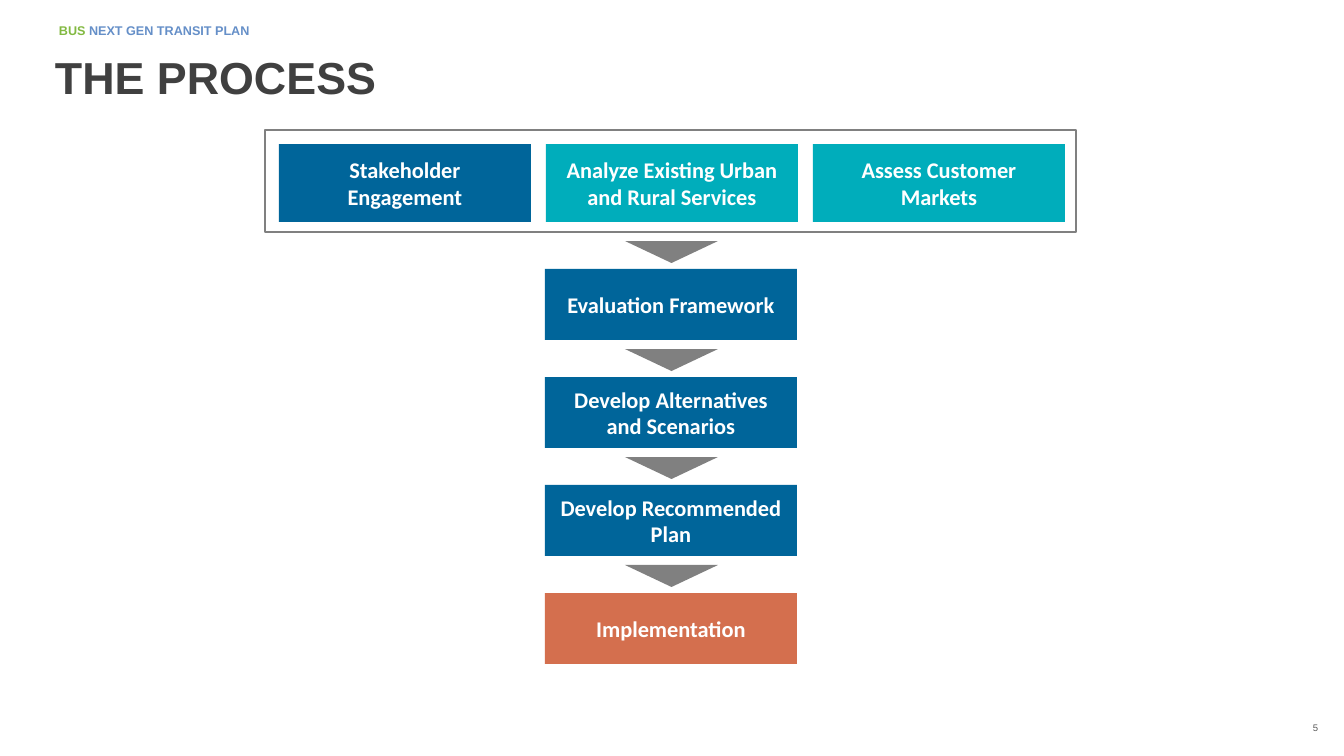
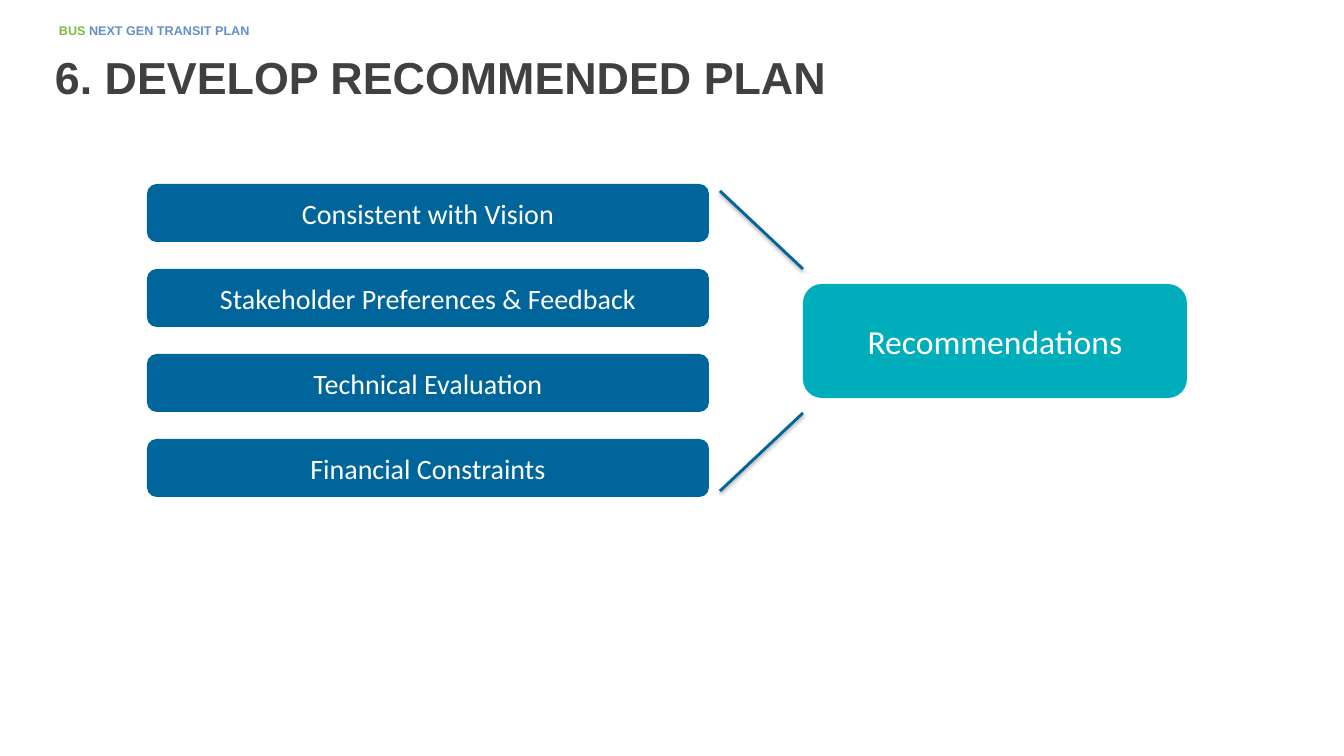
from dataclasses import dataclass

from lxml import etree
from pptx import Presentation
from pptx.dml.color import RGBColor
from pptx.enum.shapes import MSO_CONNECTOR, MSO_SHAPE
from pptx.enum.text import MSO_ANCHOR, PP_ALIGN
from pptx.oxml.ns import qn
from pptx.util import Emu, Pt

SLIDE_WIDTH, SLIDE_HEIGHT = 1344, 756
EMU_PER_PX = 12192000 / SLIDE_WIDTH


@dataclass(frozen=True)
class Theme:
    blue: str = "00659A"
    teal: str = "00ADBB"
    orange: str = "D46F4E"
    gray: str = "808080"
    white: str = "FFFFFF"
    title_color: str = "404040"
    number_color: str = "595959"
    header_green: str = "82B941"
    header_blue: str = "658FC8"
    heading_font: str = "Arial"
    body_font: str = "Calibri"
    header_size: float = 9
    title_size: float = 32
    number_size: float = 6.8
    step_size: float = 16
    factor_size: float = 20
    result_size: float = 24
    line_width: float = 2


THEME = Theme()


def px(*lengths):
    return [Emu(round(length * EMU_PER_PX)) for length in lengths]


def rgb(color):
    return RGBColor.from_string(color)


def add_run(paragraph, text, font, size, color, bold=False):
    run = paragraph.add_run()
    run.text = text
    run.font.name = font
    run.font.size = Pt(size)
    run.font.bold = bold
    run.font.color.rgb = rgb(color)


def add_text_box(slide, bounds, runs, size, bold=True, align=PP_ALIGN.LEFT,
                 anchor=MSO_ANCHOR.MIDDLE, inset=True):
    """Add one line of heading text; runs are (text, color) pairs."""
    frame = slide.shapes.add_textbox(*px(*bounds)).text_frame
    frame.word_wrap = True
    frame.vertical_anchor = anchor
    if not inset:
        frame.margin_left = frame.margin_right = 0
        frame.margin_top = frame.margin_bottom = 0
    paragraph = frame.paragraphs[0]
    paragraph.alignment = align
    for text, color in runs:
        add_run(paragraph, text, THEME.heading_font, size, color, bold)


def add_plain_shape(slide, kind, bounds, fill=None):
    shape = slide.shapes.add_shape(kind, *px(*bounds))
    shape.shadow.inherit = False
    shape.line.fill.background()
    if fill:
        shape.fill.solid()
        shape.fill.fore_color.rgb = rgb(fill)
    else:
        shape.fill.background()
    return shape


def add_label_box(slide, kind, bounds, fill, lines, size, bold=False):
    """Add a filled box with centred white text, one paragraph per line."""
    frame = add_plain_shape(slide, kind, bounds, fill).text_frame
    frame.word_wrap = True
    frame.vertical_anchor = MSO_ANCHOR.MIDDLE
    for index, line in enumerate(lines):
        paragraph = frame.add_paragraph() if index else frame.paragraphs[0]
        paragraph.alignment = PP_ALIGN.CENTER
        add_run(paragraph, line, THEME.body_font, size, THEME.white, bold)


def add_down_marker(slide, bounds):
    marker = add_plain_shape(slide, MSO_SHAPE.ISOSCELES_TRIANGLE, bounds, THEME.gray)
    marker.rotation = 180


def add_shadowed_line(slide, start, end):
    line = slide.shapes.add_connector(MSO_CONNECTOR.STRAIGHT, *px(*start, *end))
    line.line.color.rgb = rgb(THEME.blue)
    line.line.width = Pt(THEME.line_width)
    effects = etree.SubElement(line._element.spPr, qn("a:effectLst"))
    shadow = etree.SubElement(effects, qn("a:outerShdw"), blurRad=str(Pt(3.1)),
                              dist=str(Pt(1.6)), dir="5400000", rotWithShape="0")
    color = etree.SubElement(shadow, qn("a:srgbClr"), val="000000")
    etree.SubElement(color, qn("a:alpha"), val="38000")


def add_titled_slide(presentation, title):
    slide = presentation.slides.add_slide(presentation.slide_layouts[6])
    add_text_box(slide, (49, 18, 954, 25),
                 [("BUS ", THEME.header_green),
                  ("NEXT GEN TRANSIT PLAN", THEME.header_blue)],
                 THEME.header_size, anchor=MSO_ANCHOR.TOP)
    add_text_box(slide, (45, 36, 1231, 81), [(title, THEME.title_color)],
                 THEME.title_size)
    return slide


def build_process(presentation):
    slide = add_titled_slide(presentation, "THE PROCESS")
    add_text_box(slide, (1299, 717, 33, 21), [("5", THEME.number_color)],
                 THEME.number_size, bold=False, align=PP_ALIGN.CENTER, inset=False)

    inputs = [
        (["Stakeholder", "Engagement"], THEME.blue),
        (["Analyze Existing Urban and Rural Services"], THEME.teal),
        (["Assess Customer Markets"], THEME.teal),
    ]
    for column, (lines, fill) in enumerate(inputs):
        add_label_box(slide, MSO_SHAPE.RECTANGLE, (279 + 267 * column, 144, 252, 78),
                      fill, lines, THEME.step_size, bold=True)
    frame = add_plain_shape(slide, MSO_SHAPE.RECTANGLE, (265, 130, 811, 102))
    frame.line.color.rgb = rgb(THEME.gray)
    frame.line.width = Pt(THEME.line_width)

    steps = [
        ("Evaluation Framework", THEME.blue),
        ("Develop Alternatives and Scenarios", THEME.blue),
        ("Develop Recommended Plan", THEME.blue),
        ("Implementation", THEME.orange),
    ]
    for row, (text, fill) in enumerate(steps):
        top = 269 + 108 * row
        add_down_marker(slide, (625, top - 28, 93, 22))
        add_label_box(slide, MSO_SHAPE.RECTANGLE, (545, top, 252, 71),
                      fill, [text], THEME.step_size, bold=True)


def build_recommendations(presentation):
    slide = add_titled_slide(presentation, "6. DEVELOP RECOMMENDED PLAN")
    factors = ["Consistent with Vision", "Stakeholder Preferences & Feedback",
               "Technical Evaluation", "Financial Constraints"]
    for row, text in enumerate(factors):
        add_label_box(slide, MSO_SHAPE.ROUNDED_RECTANGLE, (147, 184 + 85 * row, 562, 58),
                      THEME.blue, [text], THEME.factor_size)

    middle = 341
    add_label_box(slide, MSO_SHAPE.ROUNDED_RECTANGLE, (803, middle - 57, 384, 114),
                  THEME.teal, ["Recommendations"], THEME.result_size)
    for side in (-1, 1):
        add_shadowed_line(slide, (720, middle + 150 * side), (803, middle + 72 * side))


def main():
    presentation = Presentation()
    presentation.slide_width, presentation.slide_height = px(SLIDE_WIDTH, SLIDE_HEIGHT)
    build_process(presentation)
    build_recommendations(presentation)
    presentation.save("out.pptx")


if __name__ == "__main__":
    main()
